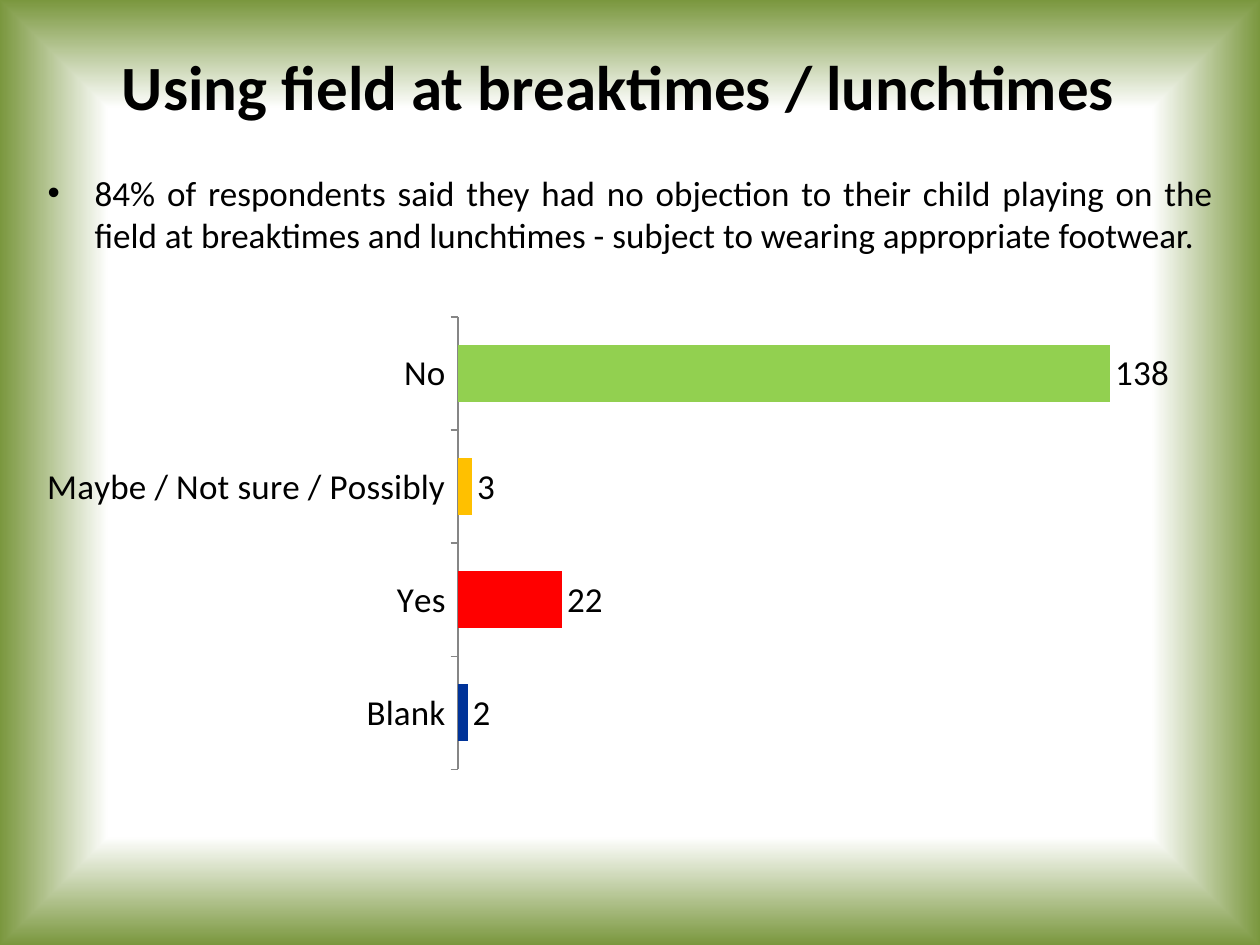
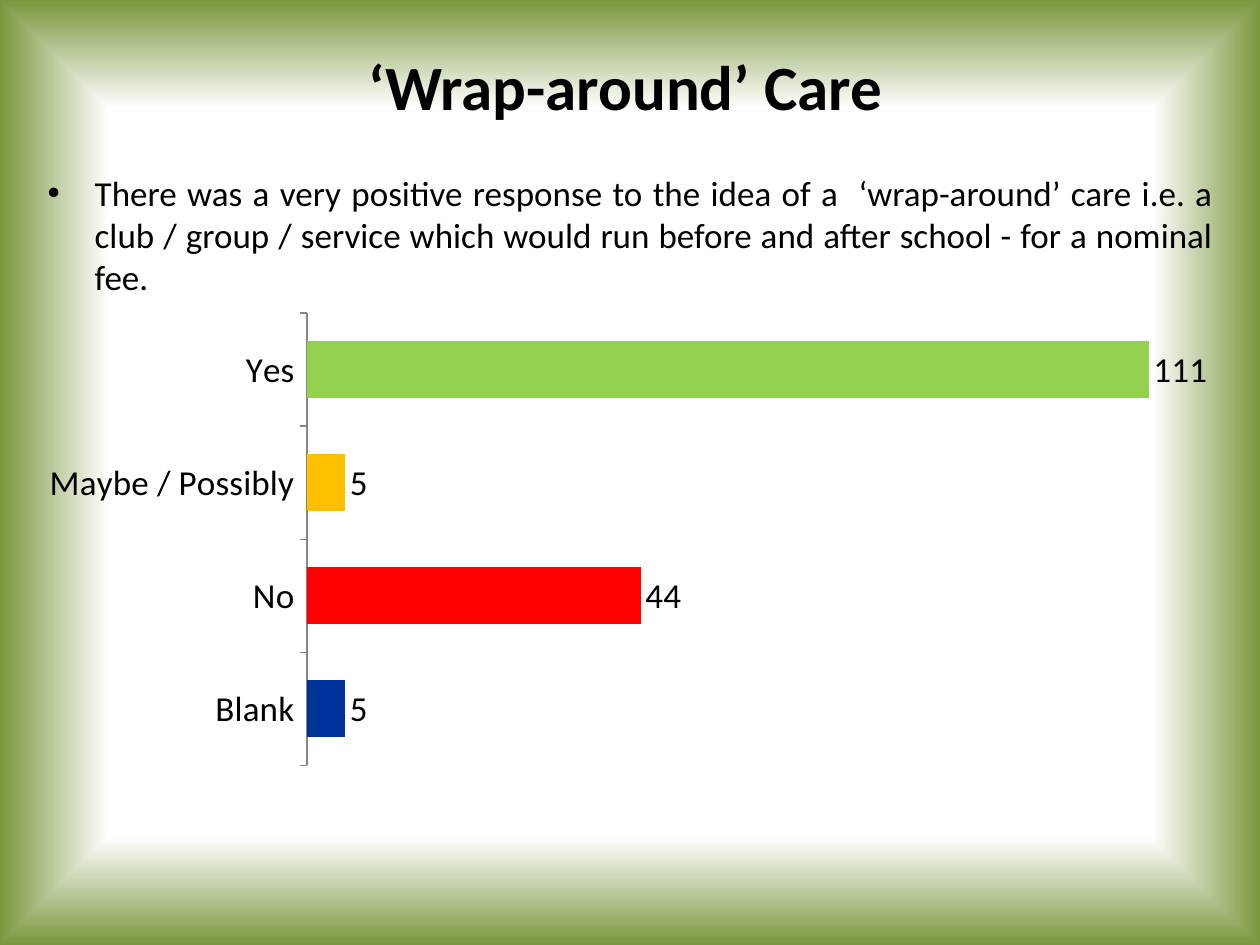
import pptx
import pptx.chart.data
import pptx.dml.color
import pptx.enum.chart
import pptx.enum.text
import pptx.oxml
import pptx.oxml.ns
import pptx.util
from pptx.util import Cm

RGB = pptx.dml.color.RGBColor
BLACK = RGB(0x00, 0x00, 0x00)
WHITE = RGB(0xFF, 0xFF, 0xFF)
OLIVE = RGB(0x7A, 0x97, 0x3E)
AXIS_GREY = RGB(0x86, 0x86, 0x86)
BLUE = RGB(0x00, 0x33, 0x99)
RED = RGB(0xFF, 0x00, 0x00)
AMBER = RGB(0xFF, 0xC0, 0x00)
GREEN = RGB(0x92, 0xD0, 0x50)
ANSWER_COLOURS = (BLUE, RED, AMBER, GREEN)

FONT = "Calibri"
TITLE_SIZE = pptx.util.Pt(36)
BODY_SIZE = pptx.util.Pt(20)
BULLET_INDENT = Cm(0.95)
TITLE_ONLY = 5


class SurveyDeck:
    def __init__(self):
        self.prs = pptx.Presentation()
        self.prs.slide_width, self.prs.slide_height = Cm(25.4), Cm(19.05)
        self.slide = None
        self.frame_background()

    def frame_background(self):
        """Give the master a white centre that fades to olive at the edges."""
        master = self.prs.slide_master
        fill = master.background.fill
        fill.gradient()
        for stop, position, colour in zip(fill.gradient_stops, (0.77, 1), (WHITE, OLIVE)):
            stop.position = position
            stop.color.rgb = colour
        gradient = master.element.find(".//" + pptx.oxml.ns.qn("p:bgPr")).find(
            pptx.oxml.ns.qn("a:gradFill"))
        linear = gradient.find(pptx.oxml.ns.qn("a:lin"))
        gradient.replace(linear, pptx.oxml.parse_xml(
            f'<a:path {pptx.oxml.ns.nsdecls("a")} path="shape">'
            '<a:fillToRect l="50000" t="50000" r="50000" b="50000"/></a:path>'))

    def style(self, font, size, bold=False):
        font.name, font.size, font.bold = FONT, size, bold
        font.color.rgb = BLACK

    def add_slide(self, heading):
        self.slide = self.prs.slides.add_slide(self.prs.slide_layouts[TITLE_ONLY])
        title = self.slide.shapes.title
        title.left, title.top, title.width, title.height = Cm(0.51), Cm(0.33), Cm(24.2), Cm(2.79)
        frame = title.text_frame
        frame.text = heading
        frame.vertical_anchor = pptx.enum.text.MSO_ANCHOR.MIDDLE
        paragraph = frame.paragraphs[0]
        paragraph.alignment = pptx.enum.text.PP_ALIGN.CENTER
        self.style(paragraph.runs[0].font, TITLE_SIZE, bold=True)

    def add_bar_chart(self, left, top, counts):
        """Draw the answers from bottom to top, one colour each."""
        data = pptx.chart.data.CategoryChartData()
        data.categories = list(counts)
        data.add_series("Series 1", list(counts.values()))
        chart = self.slide.shapes.add_chart(
            pptx.enum.chart.XL_CHART_TYPE.BAR_CLUSTERED,
            left, top, Cm(24.51), Cm(9.5), data).chart
        self.style(chart.font, BODY_SIZE)
        chart.has_legend = chart.has_title = False

        answers = chart.category_axis
        answers.major_tick_mark = pptx.enum.chart.XL_TICK_MARK.OUTSIDE
        answers.format.line.color.rgb = AXIS_GREY
        chart.value_axis.visible = False
        chart.value_axis.has_major_gridlines = False

        plot = chart.plots[0]
        plot.gap_width = 100
        plot.vary_by_categories = False
        plot.has_data_labels = True
        labels = plot.data_labels
        labels.show_value = True
        labels.position = pptx.enum.chart.XL_LABEL_POSITION.OUTSIDE_END
        self.style(labels.font, BODY_SIZE)
        for index, colour in enumerate(ANSWER_COLOURS):
            fill = plot.series[0].points[index].format.fill
            fill.solid()
            fill.fore_color.rgb = colour

    def add_bullet(self, finding):
        frame = self.slide.shapes.add_textbox(Cm(0.71), Cm(3.33), Cm(24), Cm(14.4)).text_frame
        frame.word_wrap = True
        paragraph = frame.paragraphs[0]
        paragraph.text = finding
        paragraph.alignment = pptx.enum.text.PP_ALIGN.JUSTIFY
        properties = paragraph._p.get_or_add_pPr()
        properties.set("marL", str(BULLET_INDENT))
        properties.set("indent", str(-BULLET_INDENT))
        for bullet in ('<a:buFont {} typeface="Arial"/>', '<a:buChar {} char="•"/>'):
            properties.append(pptx.oxml.parse_xml(bullet.format(pptx.oxml.ns.nsdecls("a"))))
        self.style(paragraph.runs[0].font, BODY_SIZE)


def main():
    deck = SurveyDeck()

    deck.add_slide("Using field at breaktimes / lunchtimes ")
    deck.add_bar_chart(Cm(0.46), Cm(6.2), {
        "Blank": 2, "Yes": 22, "Maybe / Not sure / Possibly": 3, "No": 138})
    deck.add_bullet(
        "84% of respondents said they had no objection to their child playing on the field "
        "at breaktimes and lunchtimes - subject to wearing appropriate footwear.")

    deck.add_slide("‘Wrap-around’ Care")
    deck.add_bar_chart(Cm(0.51), Cm(6.12), {
        "Blank": 5, "No": 44, "Maybe / Possibly": 5, "Yes": 111})
    deck.add_bullet(
        "There was a very positive response to the idea of a  ‘wrap-around’ care i.e. a club "
        "/ group / service which would run before and after school - for a nominal fee.")

    deck.prs.save("out.pptx")


if __name__ == "__main__":
    main()
